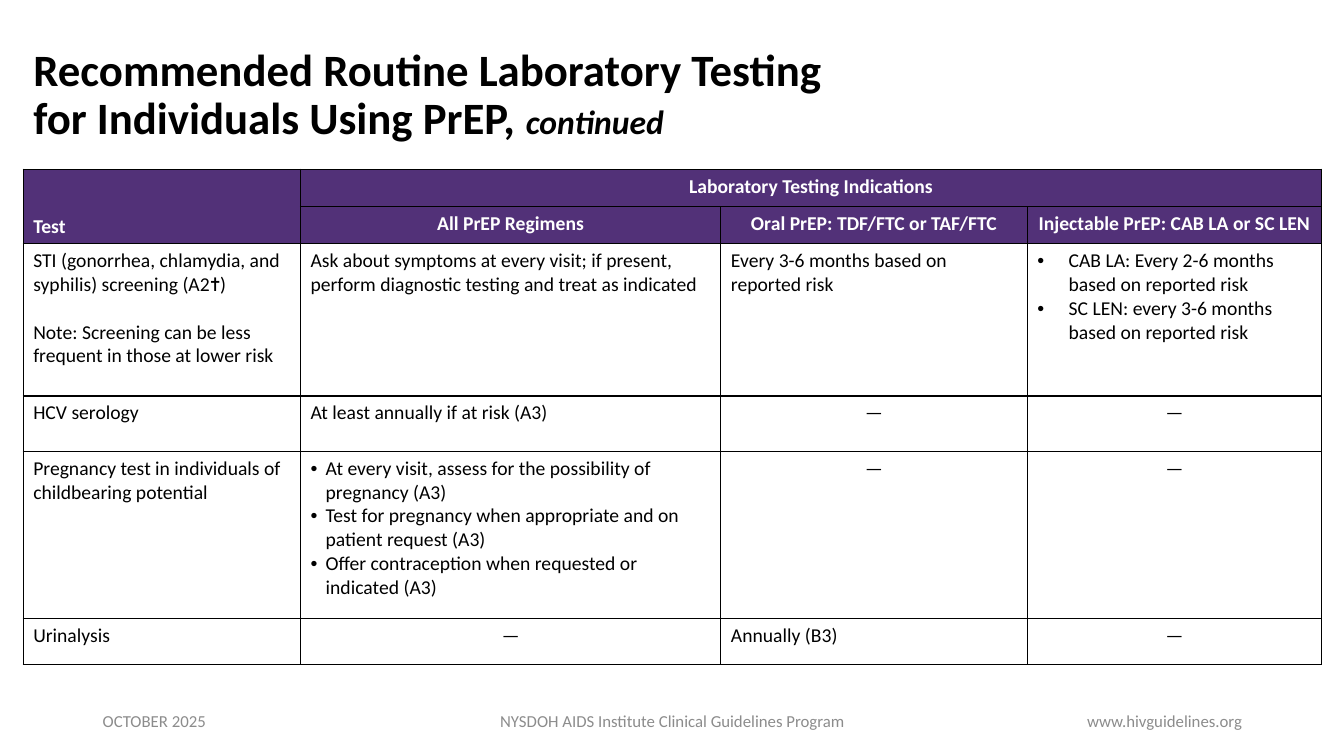
from lxml import etree
from pptx import Presentation
from pptx import util as u
from pptx.dml.color import RGBColor
from pptx.enum import text as t
from pptx.oxml import ns

WIDTH, HEIGHT = 13.33, 7.5
LEFT = 0.23
FONT = "Calibri"
BLACK, WHITE, PURPLE, GREY = "000000", "FFFFFF", "523178", "8C8C8C"
COLUMNS = [2.75, 4.17, 3.04, 2.92]
ROWS = [0.37, 0.37, 1.51, 0.55, 1.66, 0.45]
DASH = "—"

HEADERS = [
    ["Test", "Laboratory Testing Indications", "", ""],
    ["", "All PrEP Regimens", "Oral PrEP: TDF/FTC or TAF/FTC", "Injectable PrEP: CAB LA or SC LEN"],
]
# A list holds the paragraphs of a cell; a tuple holds bullets after their indent.
TESTS = [
    [
        ["STI (gonorrhea, chlamydia, and syphilis) screening (A2✝)",
         "Note: Screening can be less frequent in those at lower risk"],
        "Ask about symptoms at every visit; if present, perform diagnostic testing and treat as indicated",
        "Every 3-6 months based on reported risk",
        (0.31, ["CAB LA: Every 2-6 months based on reported risk",
                "SC LEN: every 3-6 months based on reported risk"]),
    ],
    ["HCV serology", "At least annually if at risk (A3)", DASH, DASH],
    [
        "Pregnancy test in individuals of childbearing potential",
        (0.15, ["At every visit, assess for the possibility of pregnancy (A3)",
                "Test for pregnancy when appropriate and on patient request (A3)",
                "Offer contraception when requested or indicated (A3)"]),
        DASH,
        DASH,
    ],
    ["Urinalysis", DASH, "Annually (B3)", DASH],
]


def color(hex_string):
    return RGBColor.from_string(hex_string)


def write(paragraph, text, size=14, fill=BLACK, bold=False, italic=False, align="LEFT"):
    """Append a formatted run to the paragraph."""
    paragraph.alignment = getattr(t.PP_ALIGN, align)
    run = paragraph.add_run()
    run.text = text
    font = run.font
    font.name, font.size, font.bold, font.italic = FONT, u.Pt(size), bold, italic
    font.color.rgb = color(fill)


def add_bullet(paragraph, indent):
    properties = paragraph._p.get_or_add_pPr()
    properties.set("marL", str(u.Inches(indent)))
    properties.set("indent", str(-u.Inches(indent)))
    etree.SubElement(properties, ns.qn("a:buFont"), typeface="Arial")
    etree.SubElement(properties, ns.qn("a:buChar"), char="•")


def add_borders(cell):
    properties = cell._tc.get_or_add_tcPr()
    for side in ("lnL", "lnR", "lnT", "lnB"):
        line = etree.SubElement(properties, ns.qn(f"a:{side}"), w=str(u.Pt(1)))
        fill = etree.SubElement(line, ns.qn("a:solidFill"))
        etree.SubElement(fill, ns.qn("a:srgbClr"), val=BLACK)


def fill_cell(cell, content):
    indent, lines = content if isinstance(content, tuple) else (0, content)
    if isinstance(lines, str):
        lines = [lines]
    frame = cell.text_frame
    for index, line in enumerate(lines):
        paragraph = frame.add_paragraph() if index else frame.paragraphs[0]
        if indent:
            add_bullet(paragraph, indent)
        elif index:
            paragraph.space_before = u.Pt(17)
        write(paragraph, line, align="CENTER" if line == DASH else "LEFT")


def add_title(slide):
    title = slide.shapes.title
    title.left, title.top, title.width, title.height = map(u.Inches, (LEFT, 0.23, 12.08, 1.45))
    frame = title.text_frame
    frame.auto_size = t.MSO_AUTO_SIZE.NONE
    frame.vertical_anchor = t.MSO_ANCHOR.MIDDLE
    paragraph = frame.paragraphs[0]
    paragraph.line_spacing = 0.9
    write(paragraph, "Recommended Routine Laboratory Testing", size=32, bold=True)
    paragraph.add_line_break()
    write(paragraph, "for Individuals Using PrEP, ", size=32, bold=True)
    write(paragraph, "continued", size=24, bold=True, italic=True)


def add_testing_table(slide):
    frame = slide.shapes.add_table(
        len(ROWS), len(COLUMNS), u.Inches(LEFT), u.Inches(1.68),
        u.Inches(sum(COLUMNS)), u.Inches(sum(ROWS)))
    table = frame.table
    table.first_row = table.horz_banding = False
    for column, width in zip(table.columns, COLUMNS):
        column.width = u.Inches(width)
    for row, height in zip(table.rows, ROWS):
        row.height = u.Inches(height)
    table.cell(0, 0).merge(table.cell(1, 0))
    table.cell(0, 1).merge(table.cell(0, 3))

    for row, contents in enumerate(HEADERS + TESTS):
        for column, content in enumerate(contents):
            cell = table.cell(row, column)
            add_borders(cell)
            if row >= len(HEADERS):
                cell.fill.background()
                fill_cell(cell, content)
                continue
            cell.fill.solid()
            cell.fill.fore_color.rgb = color(PURPLE)
            if content:
                write(cell.text_frame.paragraphs[0], content, fill=WHITE, bold=True,
                      align="CENTER" if column else "LEFT")
    table.cell(0, 0).vertical_anchor = t.MSO_ANCHOR.BOTTOM


def add_footer(slide, text, left, width, align):
    box = slide.shapes.add_textbox(*map(u.Inches, (left, 6.95, width, 0.4)))
    frame = box.text_frame
    frame.word_wrap = True
    frame.vertical_anchor = t.MSO_ANCHOR.MIDDLE
    write(frame.paragraphs[0], text, size=12, fill=GREY, align=align)


def main():
    presentation = Presentation()
    presentation.slide_width, presentation.slide_height = u.Inches(WIDTH), u.Inches(HEIGHT)
    slide = presentation.slides.add_slide(presentation.slide_layouts.get_by_name("Title Only"))
    add_title(slide)
    add_testing_table(slide)
    add_footer(slide, "OCTOBER 2025", 0.92, 3, "LEFT")
    add_footer(slide, "NYSDOH AIDS Institute Clinical Guidelines Program", 4.42, 4.5, "CENTER")
    add_footer(slide, "www.hivguidelines.org", 9.42, 3, "RIGHT")
    presentation.save("out.pptx")


if __name__ == "__main__":
    main()
